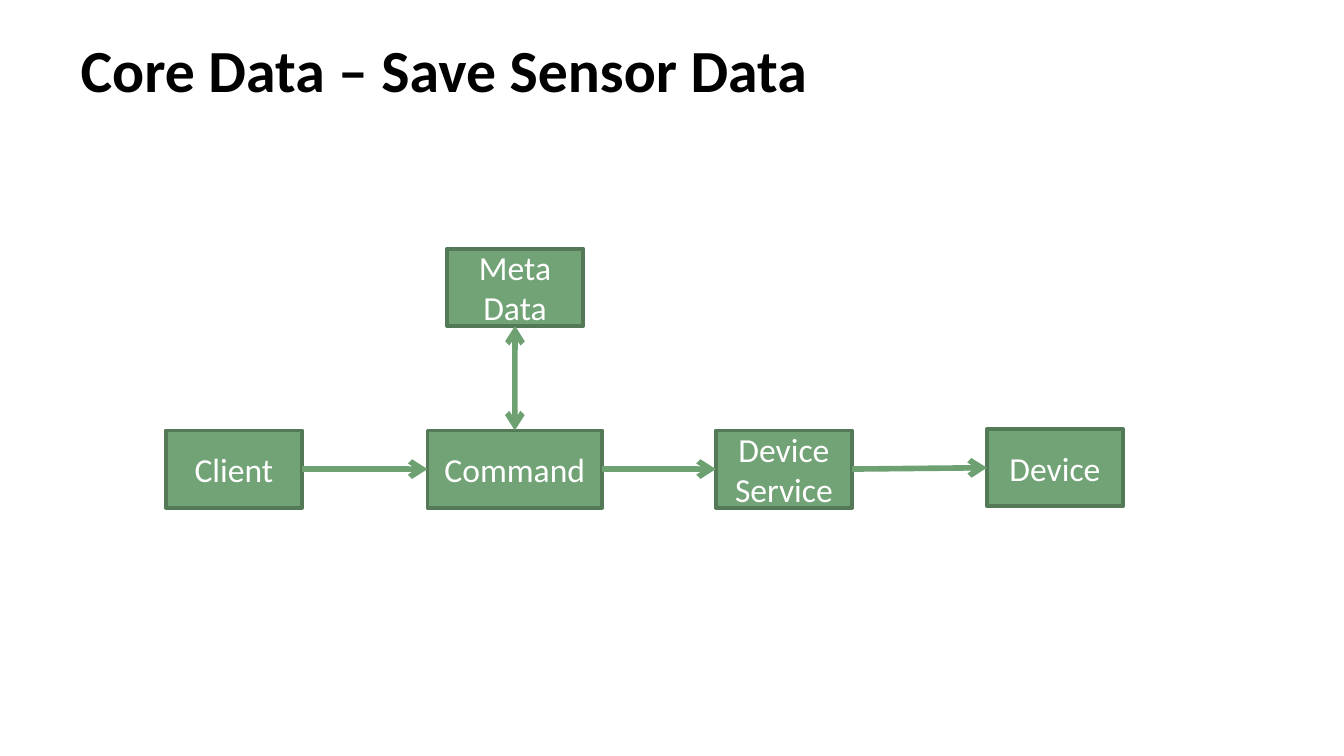
import lxml.etree
import pptx
import pptx.dml.color
import pptx.enum.shapes
import pptx.enum.text
import pptx.oxml.ns
import pptx.util

Pt = pptx.util.Pt
TOP, LEFT, BOTTOM, RIGHT = range(4)  # connection sites of a rectangle


def color(value):
    return pptx.dml.color.RGBColor.from_string(value)


def add_child(parent, tag, **attributes):
    return lxml.etree.SubElement(parent, pptx.oxml.ns.qn(tag), **attributes)


deck = pptx.Presentation()
deck.slide_width, deck.slide_height = Pt(720), Pt(405)
layout = deck.slide_layouts[5]
page = deck.slides.add_slide(layout)

# The template's footers lie below this shorter slide
for holder in (layout, deck.slide_master):
    for footer in list(holder.placeholders):
        if footer.top > deck.slide_height:
            holder.shapes._spTree.remove(footer._element)

title = page.shapes.title
title.left, title.top, title.width, title.height = Pt(36), Pt(7), Pt(648), Pt(59.4)
title.text_frame.text = "Core Data – Save Sensor Data"
title.text_frame.vertical_anchor = pptx.enum.text.MSO_ANCHOR.MIDDLE
para = title.text_frame.paragraphs[0]
para.alignment = pptx.enum.text.PP_ALIGN.LEFT
para.font.name, para.font.size, para.font.bold = "Calibri", Pt(32), True
para.font.color.rgb = color("000000")

# name: (text, left, top, width)
services = {
    "client": ("Client", 88.8, 230.6, 73),
    "command": ("Command", 229, 230.6, 93.6),
    "service": ("Device\nService", 383.5, 230.6, 73),
    "metadata": ("Meta\nData", 239.4, 133.2, 73),
    "device": ("Device", 528.7, 229.9, 73),
}
boxes = {}
for name, (text, left, top, width) in services.items():
    box = page.shapes.add_shape(
        pptx.enum.shapes.MSO_SHAPE.RECTANGLE, Pt(left), Pt(top), Pt(width), Pt(41.4))
    box.shadow.inherit = False
    box.fill.solid()
    box.fill.fore_color.rgb = color("72A376")
    box.line.color.rgb = color("547957")
    box.line.width = Pt(2)
    frame = box.text_frame
    frame.word_wrap = True
    frame.vertical_anchor = pptx.enum.text.MSO_ANCHOR.MIDDLE
    frame.text = text
    for para in frame.paragraphs:
        para.alignment = pptx.enum.text.PP_ALIGN.CENTER
        para.font.name, para.font.size = "Calibri", Pt(18)
        para.font.color.rgb = color("FFFFFF")
    boxes[name] = box

# start box and site, end box and site, ends that carry an arrowhead
links = [
    ("client", RIGHT, "command", LEFT, ["a:tailEnd"]),
    ("command", RIGHT, "service", LEFT, ["a:tailEnd"]),
    ("service", RIGHT, "device", LEFT, ["a:tailEnd"]),
    ("command", TOP, "metadata", BOTTOM, ["a:headEnd", "a:tailEnd"]),
]
for start, start_site, end, end_site, arrowheads in links:
    arrow = page.shapes.add_connector(
        pptx.enum.shapes.MSO_CONNECTOR.STRAIGHT, Pt(0), Pt(0), Pt(0), Pt(0))
    arrow.begin_connect(boxes[start], start_site)
    arrow.end_connect(boxes[end], end_site)
    arrow.line.color.rgb = color("6EA172")
    arrow.line.width = Pt(3)
    for arrowhead in arrowheads:
        add_child(arrow.line._get_or_add_ln(), arrowhead, type="arrow")
    add_child(arrow._element.spPr, "a:effectLst")

deck.save("out.pptx")
